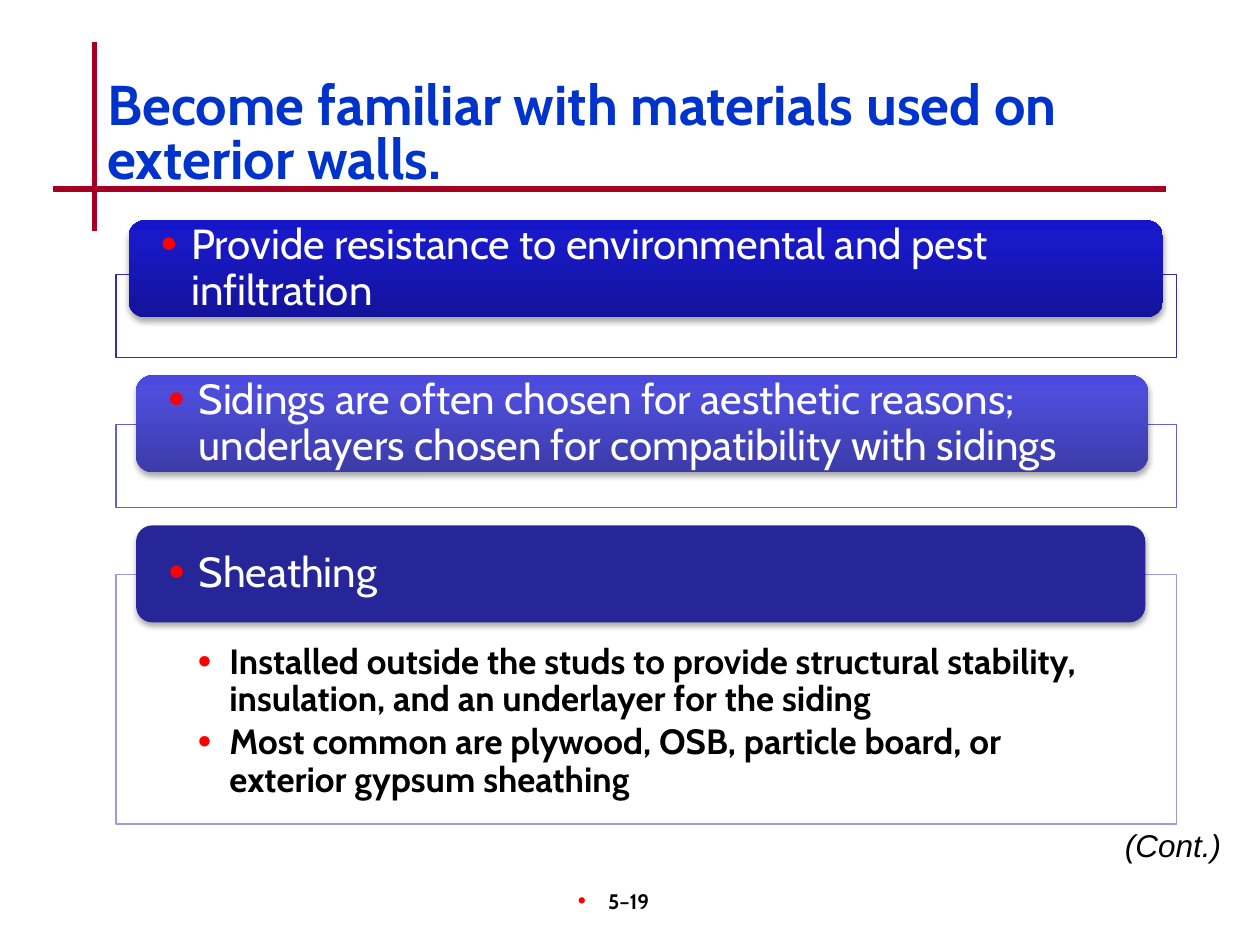
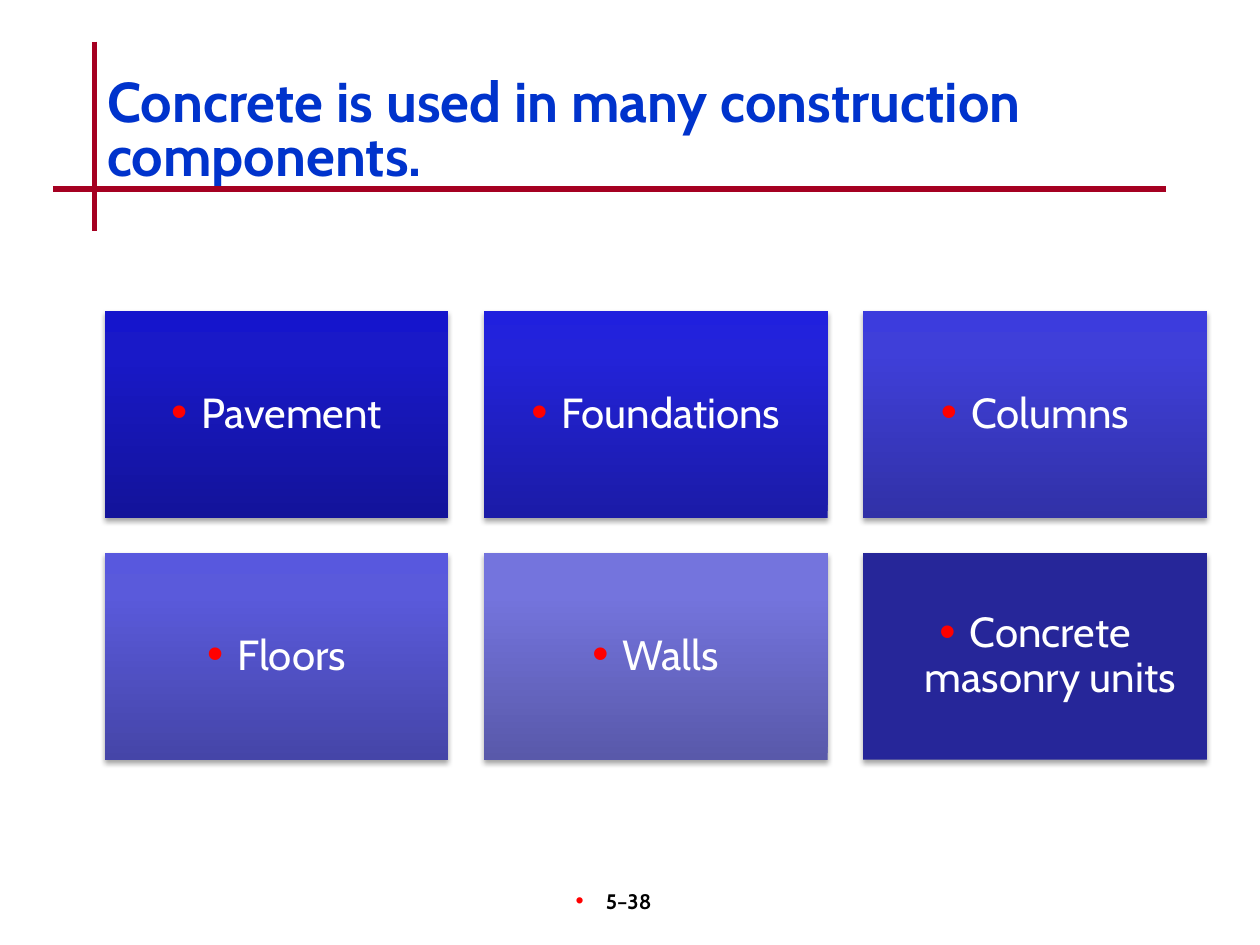
import copy
import pptx
import pptx.util
import pptx.dml.color
import pptx.enum.shapes
import pptx.enum.text
import pptx.oxml
import pptx.oxml.ns

Inches, Pt = pptx.util.Inches, pptx.util.Pt
ALIGN = pptx.enum.text.PP_ALIGN
ANCHOR = pptx.enum.text.MSO_ANCHOR
SHAPE = pptx.enum.shapes.MSO_SHAPE
qn = pptx.oxml.ns.qn

FONT = "Cabin"
RED, BLUE, NAVY = "A50021", "0033CC", "262699"
WHITE, BLACK, DOT = "FFFFFF", "000000", "FF0000"
HANG = 0.24


def color(code):
    return pptx.dml.color.RGBColor.from_string(code)


def child(node, tag, **attrs):
    part = node.makeelement(qn(tag), {})
    for key, value in attrs.items():
        part.set(key, str(value))
    node.append(part)
    return part


# Text
def bullet(para, hang=HANG):
    props = para._p.get_or_add_pPr()
    props.set("marL", str(Inches(hang)))
    props.set("indent", str(-Inches(hang)))
    child(child(props, "a:buClr"), "a:srgbClr", val=DOT)
    child(props, "a:buSzPct", val=110000)
    child(props, "a:buFont", typeface="Arial")
    child(props, "a:buChar", char="•")


def style(para, size, code, bold=False, italic=False, face=FONT,
          align=ALIGN.LEFT, lead=None):
    para.alignment = align
    para.space_before = Pt(0)
    if lead:
        para.line_spacing = lead
    for run in para.runs:
        font = run.font
        font.name, font.size = face, Pt(size)
        font.bold, font.italic = bold, italic
        font.color.rgb = color(code)


def frame(shape, pads, anchor):
    text = shape.text_frame
    text.word_wrap = True
    text.auto_size = pptx.enum.text.MSO_AUTO_SIZE.NONE
    text.vertical_anchor = anchor
    (text.margin_left, text.margin_top,
     text.margin_right, text.margin_bottom) = map(Inches, pads)
    return text


def place(shape, box):
    shape.left, shape.top, shape.width, shape.height = map(Inches, box)


def label(slide, box, words, right=0.1):
    shape = slide.shapes.add_textbox(*map(Inches, box))
    text = frame(shape, (0.1, 0.05, right, 0.05), ANCHOR.TOP)
    text.text = words
    return text.paragraphs[0]


# Title, crossed rules and page number shared by the slides
def base(deck, layout, title, top, page):
    slide = deck.slides.add_slide(deck.slide_layouts[layout])
    for ends in ((0.75, 0.33, 0.75, 1.83), (0.42, 1.5, 9.25, 1.5)):
        rule = slide.shapes.add_connector(
            pptx.enum.shapes.MSO_CONNECTOR.STRAIGHT, *map(Inches, ends))
        rule.line.color.rgb = color(RED)
        rule.line.width = Pt(3)
        child(rule._element.spPr, "a:effectLst")

    head = slide.shapes.title
    place(head, (0.75, top, 8.5, 1))
    text = frame(head, (0.1, 0.05, 0.1, 0.05), ANCHOR.MIDDLE)
    text.text = title
    style(text.paragraphs[0], 32, BLUE, bold=True, lead=0.8)

    para = label(slide, (3.92, 7, 2.08, 0.5), page, right=0.28)
    bullet(para)
    style(para, 12, BLACK, bold=True, align=ALIGN.CENTER)
    return slide


# Shaded card with one bulleted line
def shade(shape, codes):
    fill = shape.fill
    if len(codes) == 1:
        fill.solid()
        fill.fore_color.rgb = color(codes[0])
        return
    fill.gradient()
    fill.gradient_angle = 90
    stops = shape._element.spPr.find(".//" + qn("a:gsLst"))
    stops.append(copy.deepcopy(stops[-1]))
    for stop, spot, code in zip(fill.gradient_stops, (0, 0.8, 1), codes):
        stop.position = spot
        stop.color.rgb = color(code)


def card(slide, kind, box, words, codes, pads, align):
    shape = slide.shapes.add_shape(kind, *map(Inches, box))
    shade(shape, codes)
    shape.line.fill.background()
    shape.shadow.inherit = False
    glow = child(shape._element.spPr.find(qn("a:effectLst")), "a:outerShdw",
                 blurRad=Pt(3.1), dist=Pt(1.8), dir=5400000, rotWithShape=0)
    tint = child(glow, "a:srgbClr", val=BLACK)
    child(tint, "a:alpha", val=35000)

    text = frame(shape, pads, ANCHOR.MIDDLE)
    text.text = words
    bullet(text.paragraphs[0])
    style(text.paragraphs[0], 24, WHITE, align=align, lead=0.9)


# Outlined panel
def panel(shape, box, edge):
    place(shape, box)
    shape.fill.solid()
    shape.fill.fore_color.rgb = color(WHITE)
    shape.line.color.rgb = color(edge)
    shape.line.width = Pt(0.75)


def walls(deck):
    slide = base(deck, 1, "Become familiar with materials used on exterior walls.",
                 0.58, "5–19")
    left, top, wide, step = 0.92, 2.18, 8.42, 1.19
    # Panel height and edge; card left, top and width; words and shades
    rows = [
        (0.66, "2E2EB9", 1.02, 1.75, 8.21,
         "Provide resistance to environmental and pest infiltration",
         ("13139A", "1919C8", "1515CC")),
        (0.66, "6060D0", 1.08, 2.98, 8.03,
         "Sidings are often chosen for aesthetic reasons; "
         "underlayers chosen for compatibility with sidings",
         ("3B3BA8", "4D4DDA", "4A4ADE")),
        (1.98, "9C9CDD", 1.08, 4.17, 8.01, "Sheathing", (NAVY,)),
    ]
    body = slide.placeholders[1]
    for i, (high, edge, x, y, span, words, codes) in enumerate(rows):
        if i == len(rows) - 1:
            back = body
        else:
            back = slide.shapes.add_shape(SHAPE.RECTANGLE, 0, 0, 0, 0)
            back.shadow.inherit = False
        panel(back, (left, top + i * step, wide, high), edge)
        card(slide, SHAPE.ROUNDED_RECTANGLE, (x, y, span, 0.77), words, codes,
             (0.22, 0, 0.22, 0), ALIGN.LEFT)

    # Details under the last card
    text = frame(body, (0.65, 0.55, 0.65, 0.16), ANCHOR.TOP)
    text.text = ("Installed outside the studs to provide structural stability, "
                 "insulation, and an underlayer for the siding\n"
                 "Most common are plywood, OSB, particle board, or exterior "
                 "gypsum sheathing")
    for para in text.paragraphs:
        bullet(para, 0.25)
        style(para, 20, BLACK, bold=True, lead=0.9)
        para.space_after = Pt(3)

    note = label(slide, (8.12, 6.51, 1.67, 0.4), "(Cont.)")
    style(note, 18, BLACK, italic=True, face="Arial", align=ALIGN.RIGHT)


def uses(deck):
    slide = base(deck, 5, "Concrete is used in many construction components.",
                 0.56, "5–38")
    left, top, wide, high, gap = 0.83, 2.47, 2.73, 1.64, 0.28
    cells = [
        ("Pavement", ("13139A", "1919C8", "1515CC")),
        ("Foundations", ("1B1BA7", "2323D9", "2020DE")),
        ("Columns", ("3131A7", "3F3FD9", "3C3CDD")),
        ("Floors", ("4545A8", "5A5ADB", "5858DE")),
        ("Walls", ("5959AA", "7474DD", "7373E0")),
        ("Concrete masonry units", (NAVY,)),
    ]
    for i, (words, codes) in enumerate(cells):
        row, col = divmod(i, 3)
        box = (left + col * (wide + gap), top + row * (high + gap), wide, high)
        card(slide, SHAPE.RECTANGLE, box, words, codes, (0.1,) * 4, ALIGN.CENTER)


def main():
    deck = pptx.Presentation()
    deck.slide_width, deck.slide_height = Inches(10), Inches(7.5)
    walls(deck)
    uses(deck)
    deck.save("out.pptx")


if __name__ == "__main__":
    main()
